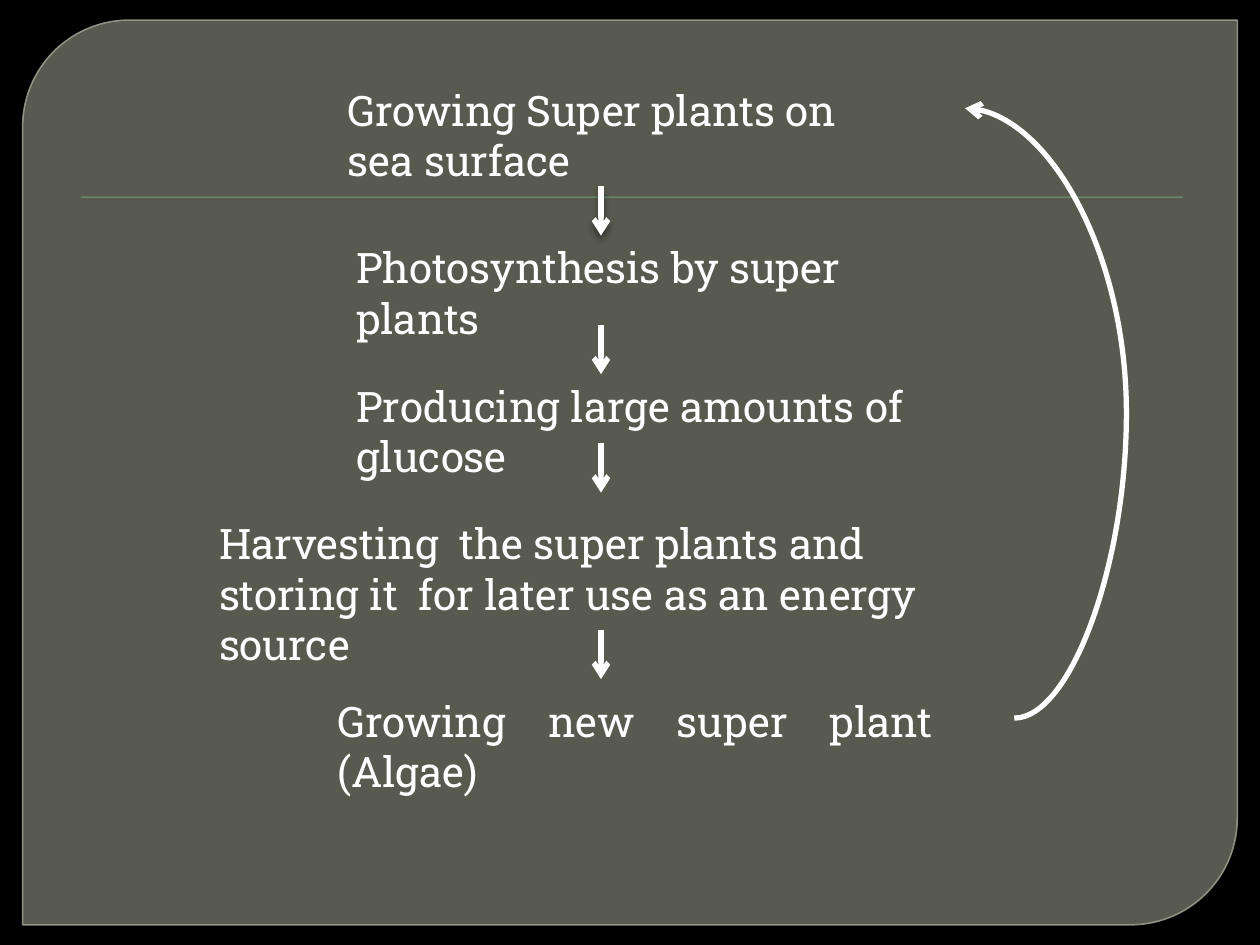
from lxml import etree
from pptx import Presentation
from pptx.dml.color import RGBColor
from pptx.enum.shapes import MSO_CONNECTOR, MSO_SHAPE
from pptx.enum.text import MSO_AUTO_SIZE, PP_ALIGN
from pptx.oxml.ns import qn
from pptx.util import Inches, Pt

STRAIGHT, CURVE = MSO_CONNECTOR.STRAIGHT, MSO_CONNECTOR.CURVE
PANEL_SHAPE, RULE_SHAPE = MSO_SHAPE.ROUND_2_DIAG_RECTANGLE, MSO_SHAPE.RECTANGLE
LEFT, JUSTIFY = PP_ALIGN.LEFT, PP_ALIGN.JUSTIFY
FIT_SHAPE = MSO_AUTO_SIZE.SHAPE_TO_FIT_TEXT

BLACK = RGBColor(0x00, 0x00, 0x00)
WHITE = RGBColor(0xFF, 0xFF, 0xFF)
PANEL_FILL = RGBColor(0x88, 0x8B, 0x7B)
PANEL_LINE = RGBColor(0x9D, 0xA0, 0x90)
RULE_GREEN = RGBColor(0x72, 0xA3, 0x76)

FONT = "Roboto Slab"
STEP_HEIGHT = 0.91
ARROW_X, ARROW_LENGTH = 4.77, 0.39

# Text, left, top, width, alignment, right-to-left
STEPS = [
    ("Growing Super plants on sea surface", 2.66, 0.62, 4.45, LEFT, True),
    ("Photosynthesis by super plants", 2.73, 1.87, 4.06, LEFT, False),
    ("Producing large amounts of glucose", 2.73, 2.97, 4.69, LEFT, True),
    ("Harvesting  the super plants and storing it  for later use as an energy source",
     1.64, 4.06, 6.48, LEFT, False),
    ("Growing new super plant (Algae)", 2.58, 5.47, 4.92, JUSTIFY, False),
]
ARROW_TOPS = [1.48, 2.58, 3.52, 5.0]


def set_alpha(fill_parent, percent):
    """Make the solid fill directly below the given element translucent."""
    color = fill_parent.find(qn("a:solidFill"))[0]
    etree.SubElement(color, qn("a:alpha"), val=str(percent * 1000))


def set_effects(shape, shadow=None):
    """Replace the theme shadow by none, or by (opacity, blur, distance)."""
    properties = shape._element.spPr
    effects = etree.SubElement(properties, qn("a:effectLst"))
    if shadow:
        opacity, blur, distance = shadow
        outer = etree.SubElement(
            effects, qn("a:outerShdw"), blurRad=str(Pt(blur)),
            dist=str(Pt(distance)), dir="5400000", rotWithShape="0")
        color = etree.SubElement(outer, qn("a:srgbClr"), val=str(BLACK))
        etree.SubElement(color, qn("a:alpha"), val=str(opacity * 1000))


def add_panel(slide, left, top, width, height):
    panel = slide.shapes.add_shape(
        PANEL_SHAPE, Inches(left), Inches(top), Inches(width), Inches(height))
    panel.adjustments[0] = 0.118
    panel.adjustments[1] = 0
    panel.fill.solid()
    panel.fill.fore_color.rgb = PANEL_FILL
    panel.line.color.rgb = PANEL_LINE
    panel.line.width = Pt(0.87)
    set_alpha(panel._element.spPr, 65)
    set_alpha(panel.line._ln, 88)
    set_effects(panel)


def add_rule(slide, left, top, width, height):
    rule = slide.shapes.add_shape(
        RULE_SHAPE, Inches(left), Inches(top), Inches(width), Inches(height))
    rule.fill.solid()
    rule.fill.fore_color.rgb = RULE_GREEN
    rule.line.fill.background()
    set_effects(rule, (75, 1, 1))


def add_step(slide, text, left, top, width, alignment, right_to_left):
    box = slide.shapes.add_textbox(
        Inches(left), Inches(top), Inches(width), Inches(STEP_HEIGHT))
    text_frame = box.text_frame
    text_frame.word_wrap = True
    text_frame.auto_size = FIT_SHAPE
    text_frame.text = text
    paragraph = text_frame.paragraphs[0]
    paragraph.alignment = alignment
    if right_to_left:
        paragraph._p.get_or_add_pPr().set("rtl", "1")
    font = paragraph.runs[0].font
    font.name = FONT
    font.size = Pt(24)
    font.color.rgb = WHITE


def add_arrow(slide, kind, start, end, shadow=None):
    arrow = slide.shapes.add_connector(
        kind, *(Inches(value) for value in (*start, *end)))
    arrow.line.color.rgb = WHITE
    arrow.line.width = Pt(3)
    etree.SubElement(arrow.line._ln, qn("a:tailEnd"), type="arrow")
    set_effects(arrow, shadow)
    return arrow


def add_return_arrow(slide, start, end, bulge):
    """Curve from the last step back to the first, bulging past both ends."""
    arrow = add_arrow(slide, CURVE, start, end)
    geometry = arrow._element.spPr.find(qn("a:prstGeom"))
    guides = geometry.find(qn("a:avLst"))
    if guides is None:
        guides = etree.SubElement(geometry, qn("a:avLst"))
    ratio = bulge / (start[0] - end[0])
    etree.SubElement(guides, qn("a:gd"), name="adj1",
                     fmla=f"val {round(-ratio * 100000)}")


def add_cycle(slide):
    for step in STEPS:
        add_step(slide, *step)
    for index, top in enumerate(ARROW_TOPS):
        add_arrow(slide, STRAIGHT, (ARROW_X, top), (ARROW_X, top + ARROW_LENGTH),
                  shadow=(43, 4, 3) if index == 0 else None)
    add_return_arrow(slide, (8.05, 5.7), (7.66, 0.86), bulge=0.89)


def main():
    presentation = Presentation()
    presentation.slide_width = Inches(10)
    presentation.slide_height = Inches(7.5)
    slide = presentation.slides.add_slide(presentation.slide_layouts[6])
    slide.background.fill.solid()
    slide.background.fill.fore_color.rgb = BLACK
    add_panel(slide, 0.18, 0.16, 9.64, 7.18)
    add_rule(slide, 0.64, 1.56, 8.75, 0.01)
    add_cycle(slide)
    presentation.save("out.pptx")


if __name__ == "__main__":
    main()
